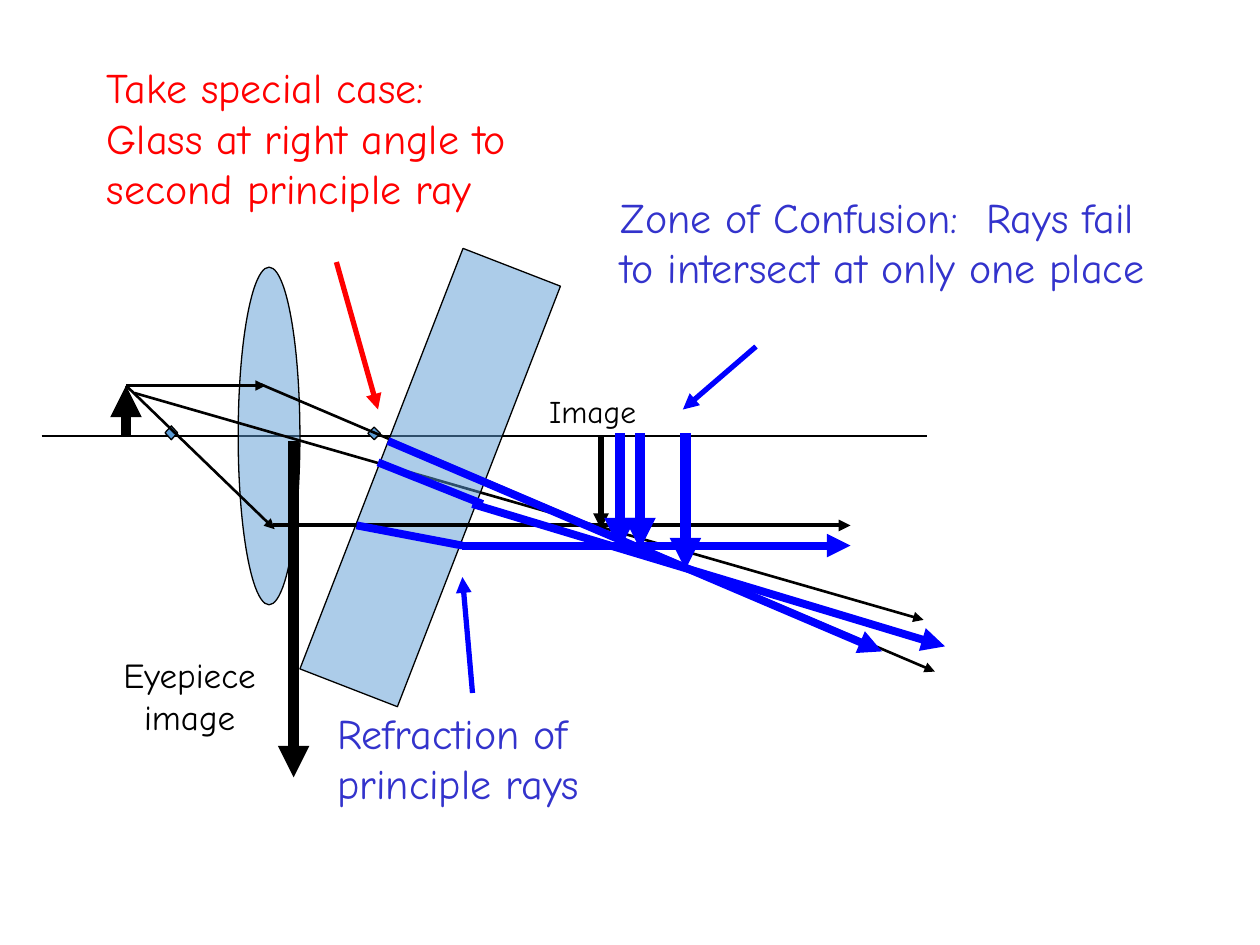
from pptx import Presentation
from pptx.dml.color import RGBColor
from pptx.enum.shapes import MSO_CONNECTOR as Conn, MSO_SHAPE as Kind
from pptx.enum.text import MSO_ANCHOR as Anchor, MSO_AUTO_SIZE as Auto, PP_ALIGN as Align
from pptx.oxml.ns import qn
from pptx.util import Inches, Pt
from lxml.etree import SubElement as Sub

COLORS = {"black": "000000", "red": "FF0000", "blue": "0000FF",
          "indigo": "3333CC", "glass": "5B9BD5"}
FONT = "Comic Neue"


def color(name):
    return RGBColor.from_string(COLORS[name])


class Sketch:
    def __init__(self, slide):
        self.shapes = slide.shapes

    def ray(self, start, end, width, hue="black", head=True):
        ends = [Inches(v) for v in (*start, *end)]
        line = self.shapes.add_connector(Conn.STRAIGHT, *ends)
        line.line.color.rgb = color(hue)
        line.line.width = Pt(width)
        if head:
            Sub(line.line._get_or_add_ln(), qn("a:tailEnd"), type="triangle")
        Sub(line._element.spPr, qn("a:effectLst"))

    def solid(self, kind, box, alpha=None, turn=0):
        shape = self.shapes.add_shape(kind, *[Inches(v) for v in box])
        shape.shadow.inherit = False
        shape.rotation = turn
        shape.fill.solid()
        shape.fill.fore_color.rgb = color("glass")
        if alpha:
            tint = shape._element.spPr.find(qn("a:solidFill"))[0]
            Sub(tint, qn("a:alpha"), val=str(alpha * 1000))
        shape.line.color.rgb = color("black")
        shape.line.width = Pt(0.75)

    def label(self, box, lines, size=24, hue="indigo", wrap=True,
              align=Align.LEFT, anchor=Anchor.MIDDLE):
        frame = self.shapes.add_textbox(*[Inches(v) for v in box]).text_frame
        frame.word_wrap = wrap
        frame.auto_size = Auto.SHAPE_TO_FIT_TEXT
        frame.vertical_anchor = anchor
        frame.text = "\n".join(lines)
        for para in frame.paragraphs:
            para.alignment = align
            for run in para.runs:
                run.font.name = FONT
                run.font.size = Pt(size)
                run.font.color.rgb = color(hue)


def main():
    deck = Presentation()
    deck.slide_width, deck.slide_height = Inches(10), Inches(7.5)
    art = Sketch(deck.slides.add_slide(deck.slide_layouts[6]))

    # Optical axis, lens and focal points
    axis = 3.46
    tip = (1, 3.06)
    art.ray((0.33, axis), (7.36, axis), 0.75, head=False)
    art.solid(Kind.OVAL, (1.89, 2.12, 0.49, 2.68), alpha=50)
    art.ray((1.07, 3.12), (7.33, 4.92), 1.5)
    art.solid(Kind.DIAMOND, (2.92, 3.39, 0.1, 0.1))
    art.solid(Kind.DIAMOND, (1.31, 3.38, 0.1, 0.11))

    # Object, first rays and image
    art.ray((1, axis), tip, 6)
    art.ray(tip, (2.11, 3.06), 1.5)
    art.ray(tip, (2.18, 4.2), 1.5)
    art.ray((4.77, axis), (4.77, 4.2), 3)
    art.label((4.26, 3.06, 0.93, 0.45), ["Image"], 18, "black",
              wrap=False, anchor=Anchor.TOP)
    art.ray((2.07, 3.05), (7.42, 5.33), 1.5)

    # Eyepiece image
    art.ray((2.33, 3.5), (2.33, 6.17), 6)
    art.label((0.83, 5.08, 1.35, 0.88), ["Eyepiece", "image"], 20, "black",
              wrap=False, align=Align.CENTER)

    # Tilted glass and its note
    art.solid(Kind.RECTANGLE, (3, 2, 0.83, 3.58), alpha=50, turn=21.2)
    art.label((0.75, 0.34, 3.75, 1.5),
              ["Take special case:", "Glass at right angle to second principle ray"],
              hue="red")
    art.ray((2.67, 2.08), (3, 3.25), 3, "red")
    art.ray((2.17, 4.17), (6.75, 4.17), 2.25)

    # Refracted rays
    for start, end, head in [
        ((2.83, 4.17), (3.67, 4.33), False),
        ((3.67, 4.33), (6.75, 4.33), True),
        ((3, 3.67), (3.83, 4), False),
        ((3.75, 4), (7.5, 5.13), True),
        ((3.08, 3.5), (7, 5.17), True),
    ]:
        art.ray(start, end, 4.5, "blue", head)
    art.label((2.58, 5.5, 2.57, 1.03), ["Refraction of principle rays"])
    art.ray((3.75, 5.5), (3.67, 4.58), 3, "blue")

    # Zone of confusion
    for x, low in [(4.92, 4.36), (5.08, 4.36), (5.44, 4.52)]:
        art.ray((x, 3.44), (x, low), 6, "blue")
    art.label((4.83, 1.17, 4.43, 1.5),
              ["Zone of Confusion:  Rays fail to intersect at only one place"])
    art.ray((6, 2.75), (5.42, 3.25), 3, "blue")

    deck.save("out.pptx")


if __name__ == "__main__":
    main()
